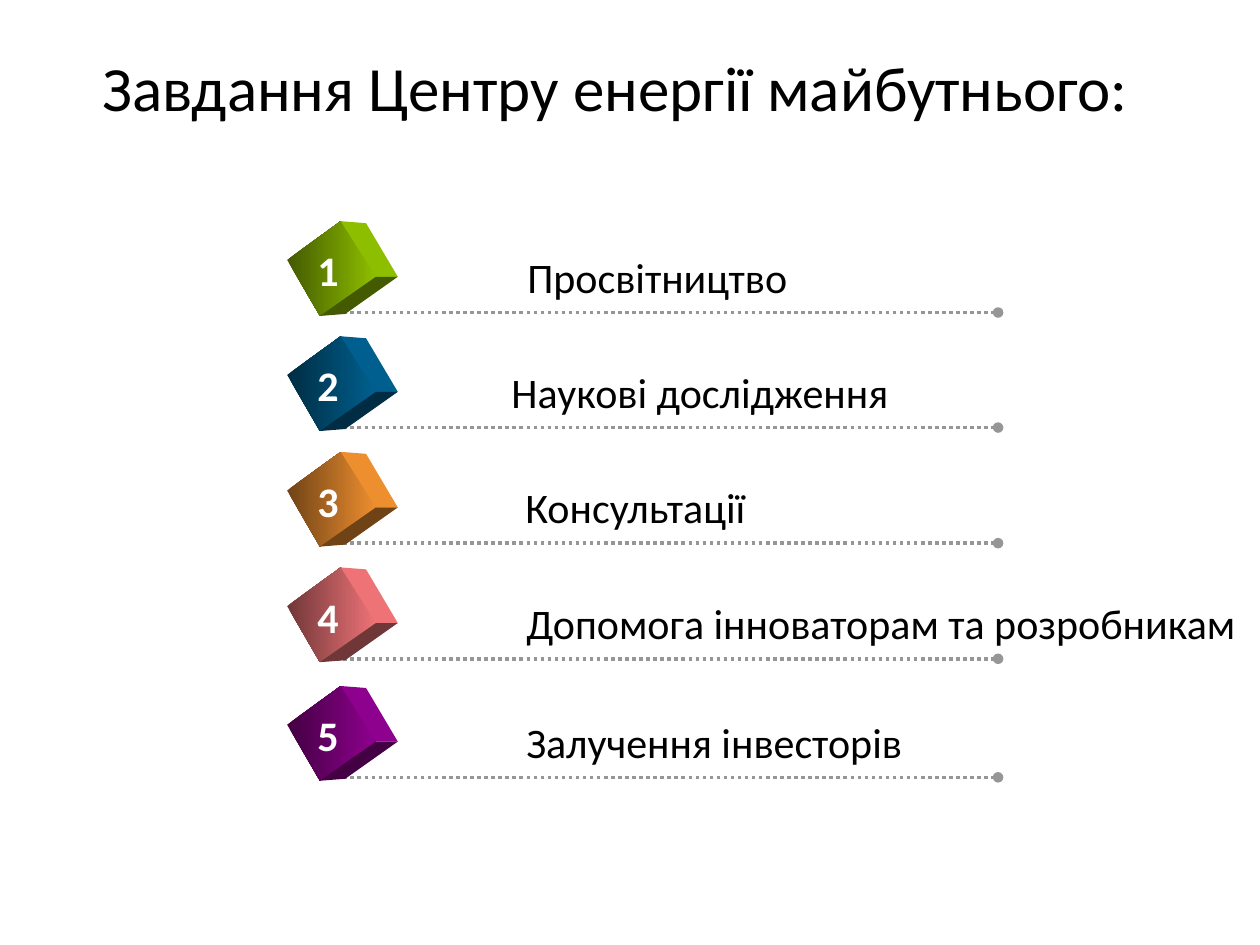
import dataclasses
import typing

import lxml.etree
import pptx
import pptx.dml.color
import pptx.enum.dml
import pptx.enum.shapes
import pptx.enum.text
import pptx.oxml.ns
import pptx.util

Cm = pptx.util.Cm
Points = list[tuple[float, float]]

FONT = "Calibri"
RULE_LEFT, RULE_RIGHT = 6.78, 20.12
FRONT: Points = [(5.79, -1.06), (6.87, -1.84), (7.58, -0.72), (6.45, 0.07)]
SIDE: Points = [(6.87, -1.84), (7.38, -1.8), (8.02, -0.72), (7.58, -0.72)]
BASE: Points = [(7.58, -0.72), (8.02, -0.72), (6.96, 0.03), (6.45, 0.07)]


@dataclasses.dataclass
class Task:
    label: str
    color: str
    rule_y: float
    label_left: float
    label_width: float


TASKS = [
    Task("Просвітництво", "99CC00", 6.3, 10.38, 6.38),
    Task("Наукові дослідження", "006699", 8.62, 10.06, 8.18),
    Task("Консультації", "FF9933", 10.95, 10.34, 5.18),
    Task("Допомога інноваторам та розробникам", "FF7C80", 13.28, 10.36, 15.14),
    Task("Залучення інвесторів", "990099", 15.67, 10.36, 8.18),
]


def rgb(color: str) -> pptx.dml.color.RGBColor:
    return pptx.dml.color.RGBColor.from_string(color)


def shade(color: str, factor: float) -> str:
    return "".join(f"{round(int(color[i:i + 2], 16) * factor):02X}" for i in (0, 2, 4))


def add_text(shapes: typing.Any, text: str, left: float, top: float, width: float,
             height: float, size: int = 24, color: str = "000000",
             bold: bool = False) -> typing.Any:
    box = shapes.add_textbox(Cm(left), Cm(top), Cm(width), Cm(height))
    box.text_frame.word_wrap = False
    span = box.text_frame.paragraphs[0].add_run()
    span.text = text
    span.font.name = FONT
    span.font.size = pptx.util.Pt(size)
    span.font.bold = bold
    span.font.color.rgb = rgb(color)
    return box


def add_rule(shapes: typing.Any, y: float) -> None:
    rule = shapes.add_connector(pptx.enum.shapes.MSO_CONNECTOR.STRAIGHT,
                                Cm(RULE_LEFT), Cm(y), Cm(RULE_RIGHT), Cm(y))
    rule.line.color.rgb = rgb("969696")
    rule.line.width = pptx.util.Pt(2)
    rule.line.dash_style = pptx.enum.dml.MSO_LINE.ROUND_DOT
    qn = pptx.oxml.ns.qn
    properties = rule.element.spPr
    lxml.etree.SubElement(properties.find(qn("a:ln")), qn("a:tailEnd"), type="oval")
    lxml.etree.SubElement(properties, qn("a:effectLst"))


def add_face(shapes: typing.Any, points: Points, y: float, colors: list[str]) -> None:
    corners = [(Cm(x), Cm(y + offset)) for x, offset in points]
    builder = shapes.build_freeform(*corners[0])
    builder.add_line_segments(corners[1:])
    face = builder.convert_to_shape()
    face.shadow.inherit = False
    face.line.fill.background()
    if len(colors) == 1:
        face.fill.solid()
        face.fill.fore_color.rgb = rgb(colors[0])
        return
    face.fill.gradient()
    face.fill.gradient_angle = 0
    for stop, color in zip(face.fill.gradient_stops, colors):
        stop.color.rgb = rgb(color)


def add_task(page: typing.Any, number: int, task: Task) -> None:
    shapes = page.shapes.add_group_shape().shapes
    light, dark = shade(task.color, 0.93), shade(task.color, 0.44)
    add_rule(shapes, task.rule_y)
    add_face(shapes, FRONT, task.rule_y, [dark, light])
    add_face(shapes, SIDE, task.rule_y, [light])
    add_face(shapes, BASE, task.rule_y, [dark])
    add_text(shapes, task.label, task.label_left, task.rule_y - 1.36,
             task.label_width, 1.28)
    add_text(shapes, str(number), 6.15, task.rule_y - 1.49, 0.99, 1.27,
             color="FFFFFF", bold=True)


def main() -> None:
    """Build the slide with the five numbered tasks of the centre."""
    deck = pptx.Presentation()
    deck.slide_width, deck.slide_height = Cm(25.4), Cm(19.05)
    page = deck.slides.add_slide(deck.slide_layouts[6])
    title = add_text(page.shapes, "Завдання Центру енергії майбутнього:",
                     1.47, 0.46, 21.87, 2.77, size=36)
    title.text_frame.word_wrap = True
    title.text_frame.vertical_anchor = pptx.enum.text.MSO_ANCHOR.MIDDLE
    para = title.text_frame.paragraphs[0]
    para.alignment = pptx.enum.text.PP_ALIGN.CENTER
    para.line_spacing = 0.9
    for number, task in enumerate(TASKS, start=1):
        add_task(page, number, task)
    deck.save("out.pptx")


if __name__ == "__main__":
    main()
